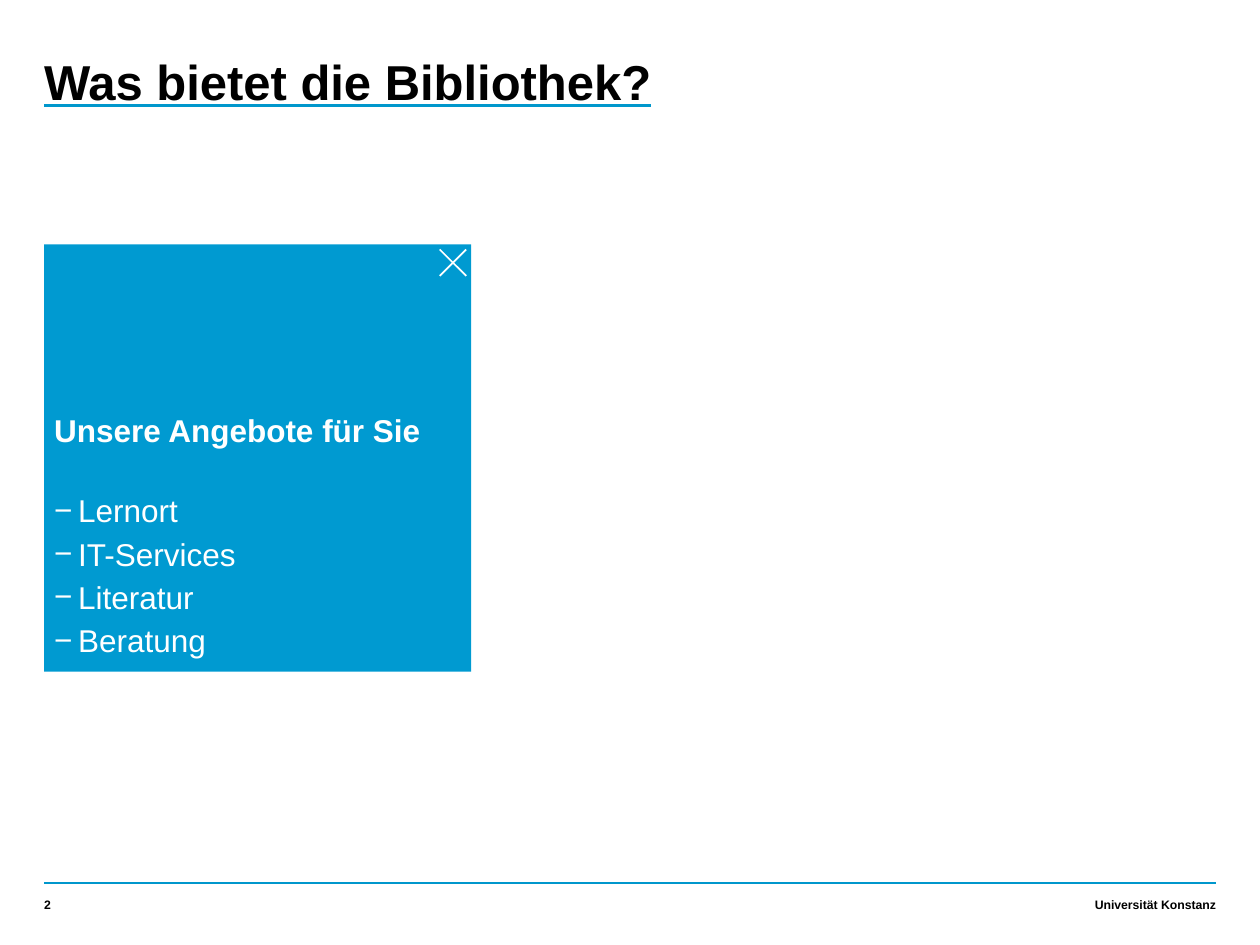
from lxml.etree import SubElement
from pptx import Presentation
from pptx.dml.color import RGBColor
from pptx.enum.shapes import MSO_CONNECTOR, MSO_SHAPE
from pptx.enum.text import MSO_ANCHOR, PP_ALIGN
from pptx.oxml.ns import qn
from pptx.util import Inches, Pt

TITLE = "Was bietet die Bibliothek?"
HEAD = "Unsere Angebote für Sie"
ITEMS = ["Lernort", "IT-Services", "Literatur", "Beratung"]
PAGE = "2"
FOOTER = "Universität Konstanz"

BLUE, RULE, WHITE, BLACK = "009AD1", "0097CC", "FFFFFF", "000000"
LEFT, RIGHT = 0.35, 9.65
BOX_TOP, BOX_SIZE = 1.94, 3.39
CROSS, GAP = 0.21, 0.04
FOOT_TOP, FOOT_H = 7.06, 0.24

deck = Presentation()
deck.slide_width, deck.slide_height = Inches(10), Inches(7.5)
slide = deck.slides.add_slide(deck.slide_layouts[6])
shapes = slide.shapes


def color(code):
    return RGBColor.from_string(code)


def set_frame(shape, insets=(0, 0, 0, 0), anchor=MSO_ANCHOR.TOP):
    frame = shape.text_frame
    frame.word_wrap = True
    frame.vertical_anchor = anchor
    (frame.margin_left, frame.margin_top,
     frame.margin_right, frame.margin_bottom) = map(Inches, insets)
    return frame


def write(frame, text, size=18, ink=BLACK, bold=True, align=PP_ALIGN.LEFT,
          spacing=1.0, before=0, bullet=None, under=None):
    para = frame.paragraphs[0]
    if para.runs:
        para = frame.add_paragraph()
    para.alignment = align
    para.line_spacing = spacing
    if before:
        para.space_before = Pt(before)
    if bullet:
        props = para._p.get_or_add_pPr()
        props.set("marL", str(Inches(0.19)))
        props.set("indent", str(-Inches(0.19)))
        SubElement(props, qn("a:buFont"), typeface="Arial")
        SubElement(props, qn("a:buChar"), char=bullet)
    run = para.add_run()
    run.text = text
    font = run.font
    font.size, font.bold = Pt(size), bold
    font.color.rgb = color(ink)
    if under:
        font.underline = True
        fill = SubElement(SubElement(font._element, qn("a:uFill")), qn("a:solidFill"))
        SubElement(fill, qn("a:srgbClr"), val=under)
    font.name = "Arial"


def add_line(x1, y1, x2, y2, ink):
    line = shapes.add_connector(MSO_CONNECTOR.STRAIGHT, *map(Inches, (x1, y1, x2, y2)))
    line.line.color.rgb = color(ink)
    line.line.width = Pt(1)
    SubElement(line._element.spPr, qn("a:effectLst"))


def add_text(x, y, w, h, **style):
    return set_frame(shapes.add_textbox(*map(Inches, (x, y, w, h))), **style)


add_line(LEFT, 7.01, RIGHT, 7.01, RULE)
for text, x, width, align in [(PAGE, LEFT, 1.02, PP_ALIGN.LEFT),
                              (FOOTER, RIGHT - 3.39, 3.39, PP_ALIGN.RIGHT)]:
    foot = add_text(x, FOOT_TOP, width, FOOT_H,
                    insets=(0, 0, 0, 0.06), anchor=MSO_ANCHOR.BOTTOM)
    write(foot, text, size=7, align=align)

title = add_text(LEFT, 0.44, 8.98, 0.87)
write(title, TITLE, size=28, spacing=0.95, under=RULE)

box = shapes.add_shape(MSO_SHAPE.RECTANGLE,
                       *map(Inches, (LEFT, BOX_TOP, BOX_SIZE, BOX_SIZE)))
box.shadow.inherit = False
box.fill.solid()
box.fill.fore_color.rgb = color(BLUE)
box.line.fill.background()
frame = set_frame(box, insets=(0.08, 0.1, 0.1, 0.1), anchor=MSO_ANCHOR.BOTTOM)
write(frame, HEAD, ink=WHITE, spacing=1.1)
for i, item in enumerate(ITEMS):
    write(frame, item, ink=WHITE, bold=False, spacing=1.1,
          before=1 if i else 22, bullet="−")

x2 = LEFT + BOX_SIZE - GAP
x1, y1 = x2 - CROSS, BOX_TOP + GAP
y2 = y1 + CROSS
add_line(x1, y1, x2, y2, WHITE)
add_line(x2, y1, x1, y2, WHITE)

deck.save("out.pptx")
